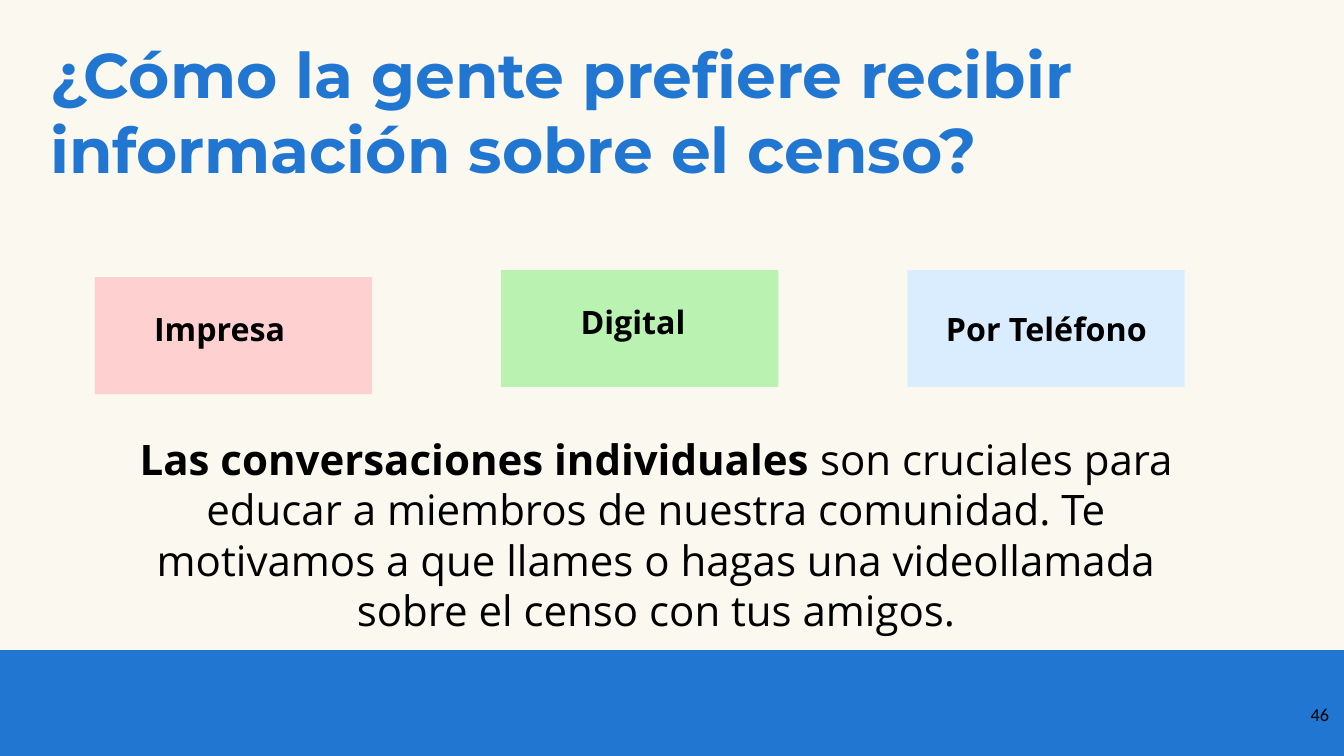
from pptx import Presentation
from pptx.dml.color import RGBColor
from pptx.enum.shapes import MSO_SHAPE
from pptx.enum.text import PP_ALIGN
from pptx.util import Inches, Pt

BLUE = RGBColor(0x21, 0x76, 0xD2)
CREAM = RGBColor(0xFB, 0xF9, 0xEF)
PINK = RGBColor(0xFE, 0xD0, 0xD0)
GREEN = RGBColor(0xB9, 0xF2, 0xB1)
SKY = RGBColor(0xDA, 0xED, 0xFE)
BLACK = RGBColor(0, 0, 0)

# Content
TITLE = "¿Cómo la gente prefiere recibir información sobre el censo?"
CHANNELS = [  # label, fill, card top, label top
    ("Impresa", PINK, 2.75, 3.02),
    ("Digital", GREEN, 2.68, 2.95),
    ("Por Teléfono", SKY, 2.68, 3.02),
]
MESSAGE_START = "Las conversaciones individuales "
MESSAGE_REST = ("son cruciales para educar a miembros de nuestra comunidad. "
                "Te motivamos a que llames o hagas una videollamada "
                "sobre el censo con tus amigos.")
PAGE_NUMBER = "46"

# Formats
TITLE_FONT = {"name": "Montserrat", "size": Pt(45), "bold": True}
LABEL_FONT = {"name": "Open Sans", "size": Pt(23), "bold": True}
STRONG_FONT = {"name": "Open Sans", "size": Pt(30), "bold": True}
MESSAGE_FONT = {**STRONG_FONT, "bold": False}
NUMBER_FONT = {"name": "Calibri", "size": Pt(13), "bold": False}

# Layout
CARD_LEFT, CARD_WIDTH, CARD_HEIGHT = 0.94, 2.75, 1.16
CARD_PITCH = 4.03
LABEL_LEFT, LABEL_WIDTH, LABEL_HEIGHT = 0.4, 3.56, 0.64
LABEL_PITCH = 4.1


def add_block(page, color, *place):
    block = page.shapes.add_shape(MSO_SHAPE.RECTANGLE, *map(Inches, place))
    block.shadow.inherit = False
    block.fill.solid()
    block.fill.fore_color.rgb = color
    block.line.fill.background()


def add_text(page, spans, align, *place, color=BLACK):
    box = page.shapes.add_textbox(*map(Inches, place))
    box.text_frame.word_wrap = True
    para = box.text_frame.paragraphs[0]
    para.alignment = align
    for text, font in spans:
        span = para.add_run()
        span.text = text
        span.font.color.rgb = color
        for attribute, value in font.items():
            setattr(span.font, attribute, value)


deck = Presentation()
deck.slide_width, deck.slide_height = Inches(13.33), Inches(7.5)
page = deck.slides.add_slide(deck.slide_layouts[6])
page.background.fill.solid()
page.background.fill.fore_color.rgb = CREAM

# Footer band and title
add_block(page, BLUE, 0, 6.45, 13.33, 1.05)
add_text(page, [(TITLE, TITLE_FONT)], PP_ALIGN.LEFT, 0.4, 0.3, 12.53, 2.52, color=BLUE)

# Channel cards with their labels
for index, (label, fill, card_top, label_top) in enumerate(CHANNELS):
    add_block(page, fill, CARD_LEFT + index * CARD_PITCH, card_top, CARD_WIDTH, CARD_HEIGHT)
    add_text(page, [(label, LABEL_FONT)], PP_ALIGN.CENTER,
             LABEL_LEFT + index * LABEL_PITCH, label_top, LABEL_WIDTH, LABEL_HEIGHT)

# Message and page number
add_text(page, [(MESSAGE_START, STRONG_FONT), (MESSAGE_REST, MESSAGE_FONT)],
         PP_ALIGN.CENTER, 0.94, 4.25, 11.14, 2.12)
add_text(page, [(PAGE_NUMBER, NUMBER_FONT)], PP_ALIGN.RIGHT, 12.48, 6.93, 0.8, 0.57)

deck.save("out.pptx")
